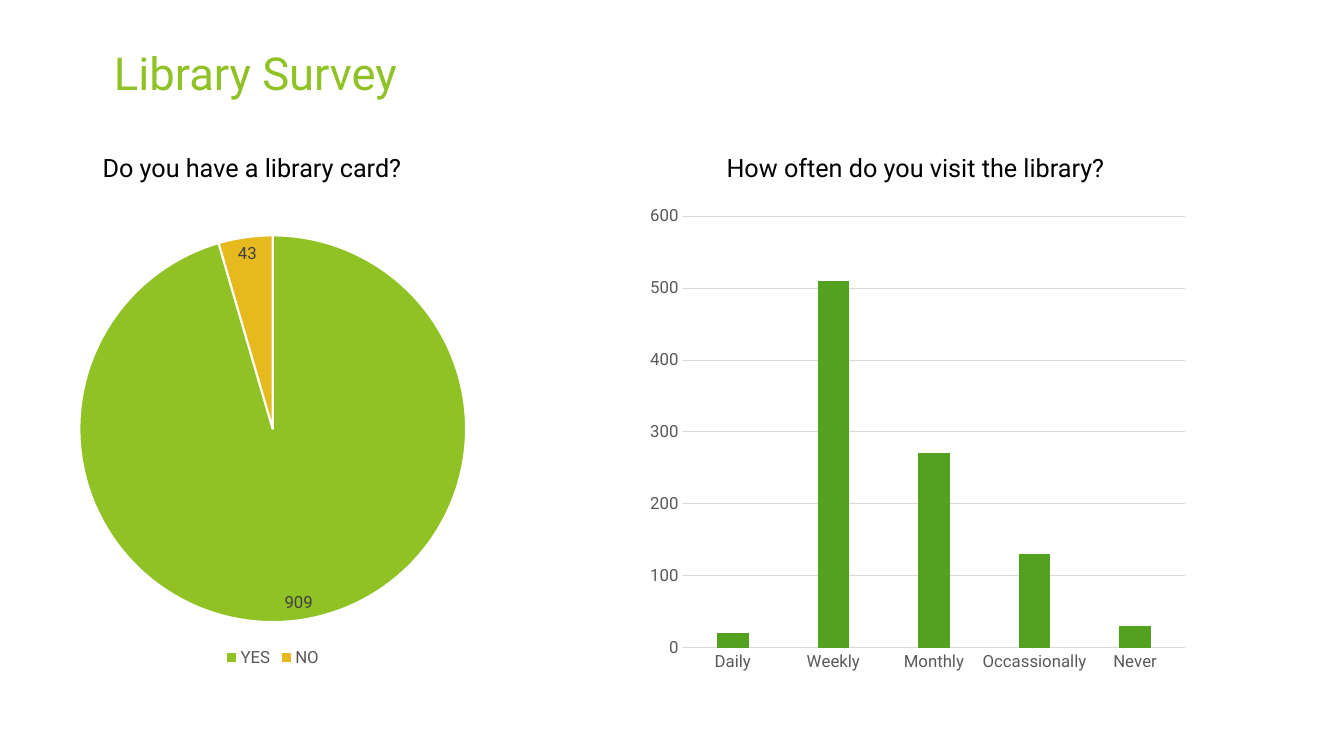
from dataclasses import dataclass

from pptx import Presentation
from pptx.chart.chart import Chart
from pptx.chart.data import CategoryChartData
from pptx.dml.color import RGBColor
from pptx.enum.chart import (
    XL_CHART_TYPE as ChartType,
    XL_LABEL_POSITION as LabelPosition,
    XL_LEGEND_POSITION as LegendPosition,
    XL_TICK_MARK as TickMark,
)
from pptx.enum.text import MSO_ANCHOR, MSO_AUTO_SIZE, PP_ALIGN
from pptx.slide import Slide
from pptx.text.text import Font, TextFrame
from pptx.util import Pt

FONT_NAME = "Roboto"
LIME = RGBColor(0x90, 0xC2, 0x26)
AMBER = RGBColor(0xE6, 0xB9, 0x1E)
GREEN = RGBColor(0x54, 0xA0, 0x21)
BLACK = RGBColor(0x00, 0x00, 0x00)
WHITE = RGBColor(0xFF, 0xFF, 0xFF)
DARK_GRAY = RGBColor(0x40, 0x40, 0x40)
GRAY = RGBColor(0x59, 0x59, 0x59)
LIGHT_GRAY = RGBColor(0xD9, 0xD9, 0xD9)


@dataclass(frozen=True)
class Box:
    left: float
    top: float
    width: float
    height: float

    def lengths(self) -> tuple[Pt, Pt, Pt, Pt]:
        return Pt(self.left), Pt(self.top), Pt(self.width), Pt(self.height)


@dataclass(frozen=True)
class Question:
    text: str
    text_box: Box
    chart_type: ChartType
    chart_box: Box
    answers: dict[str, int]


CARD_QUESTION = Question(
    "Do you have a library card?",
    Box(66.2, 105.1, 403.2, 28.8),
    ChartType.PIE,
    Box(20.2, 140.4, 349.2, 339.1),
    {"YES": 909, "NO": 43},
)
VISIT_QUESTION = Question(
    "How often do you visit the library?",
    Box(511.9, 105.1, 305.3, 28.8),
    ChartType.COLUMN_CLUSTERED,
    Box(456.5, 140.4, 398.2, 346.3),
    {"Daily": 20, "Weekly": 510, "Monthly": 270, "Occassionally": 130, "Never": 30},
)


def format_font(font: Font, size: float, color: RGBColor) -> None:
    font.name = FONT_NAME
    font.size = Pt(size)
    font.color.rgb = color


def write_text(frame: TextFrame, text: str, size: float, color: RGBColor) -> None:
    frame.word_wrap = True
    frame.vertical_anchor = MSO_ANCHOR.TOP
    paragraph = frame.paragraphs[0]
    paragraph.alignment = PP_ALIGN.LEFT
    run = paragraph.add_run()
    run.text = text
    format_font(run.font, size, color)


def add_title(slide: Slide, text: str) -> None:
    title = slide.shapes.title
    title.left, title.top, title.width, title.height = Box(74.2, 28.8, 819.4, 40.3).lengths()
    title.text_frame.auto_size = MSO_AUTO_SIZE.NONE
    write_text(title.text_frame, text, 32.4, LIME)


def add_question(slide: Slide, question: Question) -> Chart:
    """Add the question's heading and its chart, and return the chart."""
    heading = slide.shapes.add_textbox(*question.text_box.lengths())
    write_text(heading.text_frame, question.text, 18, BLACK)

    data = CategoryChartData()
    data.categories = list(question.answers)
    data.add_series("Series 1", list(question.answers.values()))
    chart = slide.shapes.add_chart(
        question.chart_type, *question.chart_box.lengths(), data
    ).chart
    chart.has_title = False
    chart.has_legend = False
    format_font(chart.font, 10, BLACK)
    return chart


def format_pie(chart: Chart) -> None:
    chart.has_legend = True
    chart.legend.position = LegendPosition.BOTTOM
    chart.legend.include_in_layout = False
    format_font(chart.legend.font, 12, GRAY)

    plot = chart.plots[0]
    plot.vary_by_categories = True
    for index, color in enumerate((LIME, AMBER)):
        slice_format = plot.series[0].points[index].format
        slice_format.fill.solid()
        slice_format.fill.fore_color.rgb = color
        slice_format.line.color.rgb = WHITE
        slice_format.line.width = Pt(1.5)

    labels = plot.series[0].data_labels
    labels.show_value = True
    labels.show_percentage = False
    labels.position = LabelPosition.BEST_FIT
    format_font(labels.font, 12, DARK_GRAY)


def format_columns(chart: Chart) -> None:
    plot = chart.plots[0]
    plot.vary_by_categories = False
    plot.gap_width = 219
    plot.overlap = -27
    fill = plot.series[0].format.fill
    fill.solid()
    fill.fore_color.rgb = GREEN

    for axis in (chart.category_axis, chart.value_axis):
        axis.major_tick_mark = TickMark.NONE
        axis.minor_tick_mark = TickMark.NONE
        format_font(axis.tick_labels.font, 12, GRAY)

    value_axis = chart.value_axis
    value_axis.minimum_scale = 0
    value_axis.maximum_scale = 600
    value_axis.major_unit = 100
    value_axis.has_major_gridlines = True
    value_axis.format.line.fill.background()
    for line in (chart.category_axis.format.line, value_axis.major_gridlines.format.line):
        line.color.rgb = LIGHT_GRAY
        line.width = Pt(0.75)


def main() -> None:
    presentation = Presentation()
    presentation.slide_width = Pt(960)
    presentation.slide_height = Pt(540)
    title_only = presentation.slide_layouts.get_by_name("Title Only")
    slide = presentation.slides.add_slide(title_only)
    add_title(slide, "Library Survey")
    format_pie(add_question(slide, CARD_QUESTION))
    format_columns(add_question(slide, VISIT_QUESTION))
    presentation.save("out.pptx")


if __name__ == "__main__":
    main()
